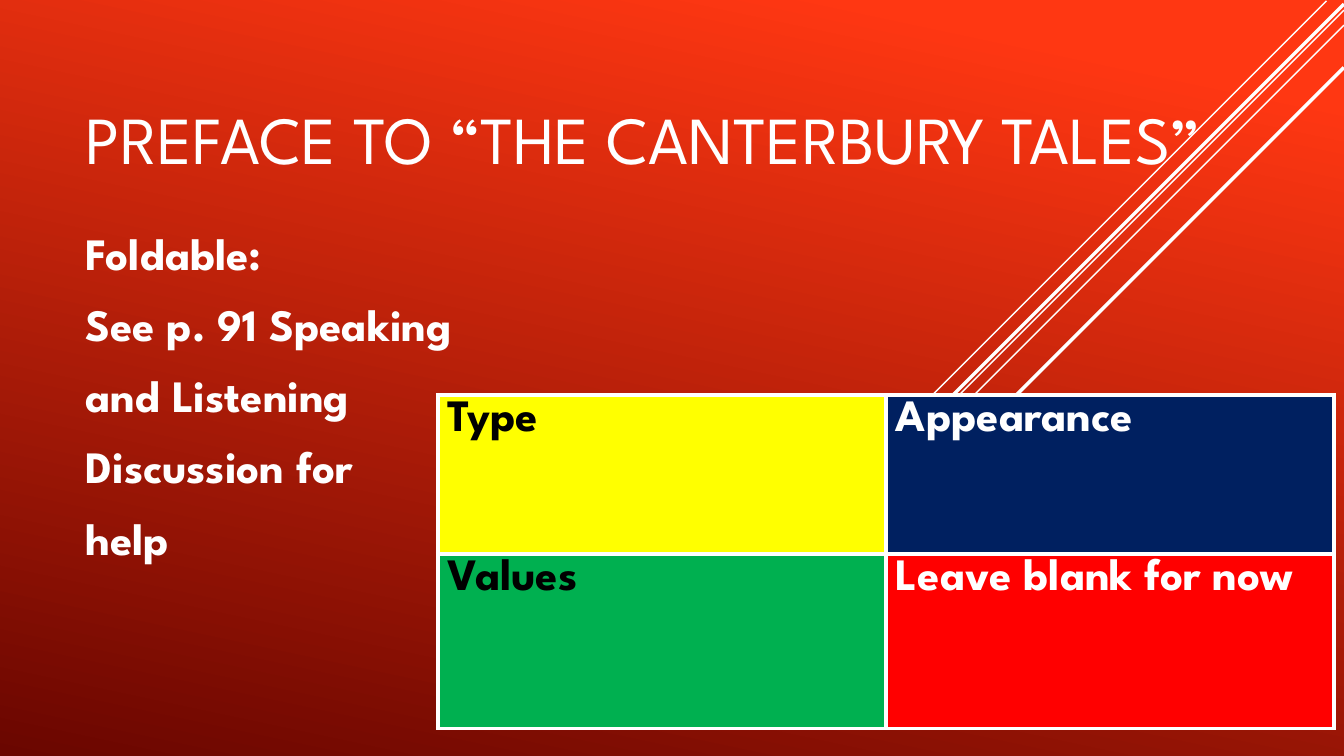
import pptx
import pptx.dml.color
import pptx.enum.shapes
import pptx.enum.text
import pptx.oxml
import pptx.oxml.ns
import pptx.util

Pt = pptx.util.Pt
RGB = pptx.dml.color.RGBColor
ANCHOR = pptx.enum.text.MSO_ANCHOR

# Colours
WHITE = RGB(0xFF, 0xFF, 0xFF)
BLACK = RGB(0, 0, 0)
BRIGHT = RGB(0xFF, 0x37, 0x12)
DARK = RGB(0x6A, 0x06, 0x00)
YELLOW = RGB(0xFF, 0xFF, 0x00)
NAVY = RGB(0x00, 0x20, 0x60)
GREEN = RGB(0x00, 0xB0, 0x50)
RED = RGB(0xFF, 0x00, 0x00)

# Content
TITLE = ["PREFACE TO “THE CANTERBURY TALES”"]
BODY = ["Foldable:", "See p. 91 Speaking", "and Listening",
        "Discussion for", "help"]
CELLS = [
    [("Type", BLACK, YELLOW), ("Appearance", WHITE, NAVY)],
    [("Values", BLACK, GREEN), ("Leave blank for now", WHITE, RED)],
]

# Places: left, top, width, height
TITLE_BOX = (54, 54, 898.5, 76.6)
BODY_BOX = (54, 157.7, 781.2, 269.3)
TABLE_BOX = (312.7, 282.4, 640.2, 238)
ROWS = (113.2, 124.8)

# Diagonal rays: right end x, y, drop to the lower left, line width
RAYS = [
    (947.5, 0.7, 299.9, 1),
    (960, 7.2, 478.8, 1),
    (960, 18, 390.2, 1),
    (960, 2.9, 382, 2.5),
    (960, 48.2, 342, 2.5),
]

# Formats
TITLE_FONT = {"name": "League Spartan", "size": Pt(48), "bold": False}
BOLD_FONT = {"name": "League Spartan", "size": Pt(32), "bold": True}
BODY_PARA = {"line_spacing": 1.0, "space_before": Pt(6.4),
             "space_after": Pt(6)}
EDGE = ('<a:{} xmlns:a="http://schemas.openxmlformats.org/drawingml/2006/main"'
        ' w="{}"><a:solidFill><a:srgbClr val="{}"/></a:solidFill></a:{}>')


def apply(item, values):
    for key, value in values.items():
        setattr(item, key, value)


def write(frame, lines, font, colour, para=None):
    for i, line in enumerate(lines):
        p = frame.add_paragraph() if i else frame.paragraphs[0]
        apply(p, para or {})
        run = p.add_run()
        run.text = line
        apply(run.font, font)
        run.font.color.rgb = colour


def add_text(slide, box, lines, font, anchor, para=None):
    frame = slide.shapes.add_textbox(*map(Pt, box)).text_frame
    apply(frame, {"word_wrap": True, "vertical_anchor": anchor})
    write(frame, lines, font, WHITE, para)


def add_ray(slide, x, y, drop, width):
    kind = pptx.enum.shapes.MSO_CONNECTOR.STRAIGHT
    ray = slide.shapes.add_connector(
        kind, Pt(x), Pt(y), Pt(x - drop), Pt(y + drop))
    ray.line.color.rgb = WHITE
    ray.line.width = Pt(width)
    props = ray._element.spPr
    props.append(props.makeelement(pptx.oxml.ns.qn("a:effectLst"), {}))


def add_grid(slide):
    table = slide.shapes.add_table(2, 2, *map(Pt, TABLE_BOX)).table
    apply(table, {"first_row": False, "horz_banding": False})
    for col in table.columns:
        col.width = Pt(TABLE_BOX[2] / 2)
    for row, height in zip(table.rows, ROWS):
        row.height = Pt(height)
    for r, row in enumerate(CELLS):
        for c, (label, ink, fill) in enumerate(row):
            cell = table.cell(r, c)
            cell.fill.solid()
            cell.fill.fore_color.rgb = fill
            write(cell.text_frame, [label], BOLD_FONT, ink)
            # Borders come before the fill in the cell properties
            props = cell._tc.get_or_add_tcPr()
            for i, side in enumerate(("lnL", "lnR", "lnT", "lnB")):
                edge = EDGE.format(side, int(Pt(3)), WHITE, side)
                props.insert(i, pptx.oxml.parse_xml(edge))


def main():
    deck = pptx.Presentation()
    apply(deck, {"slide_width": Pt(960), "slide_height": Pt(540)})
    slide = deck.slides.add_slide(deck.slide_layouts[6])

    # Background
    fill = slide.background.fill
    fill.gradient()
    fill.gradient_angle = 258
    stops = zip(fill.gradient_stops, ((0.1, BRIGHT), (1, DARK)))
    for stop, (place, colour) in stops:
        stop.position = place
        stop.color.rgb = colour

    # Rays, text and table, from back to front
    for ray in RAYS:
        add_ray(slide, *ray)
    add_text(slide, TITLE_BOX, TITLE, TITLE_FONT, ANCHOR.BOTTOM)
    add_text(slide, BODY_BOX, BODY, BOLD_FONT, ANCHOR.TOP, BODY_PARA)
    add_grid(slide)
    deck.save("out.pptx")


if __name__ == "__main__":
    main()
